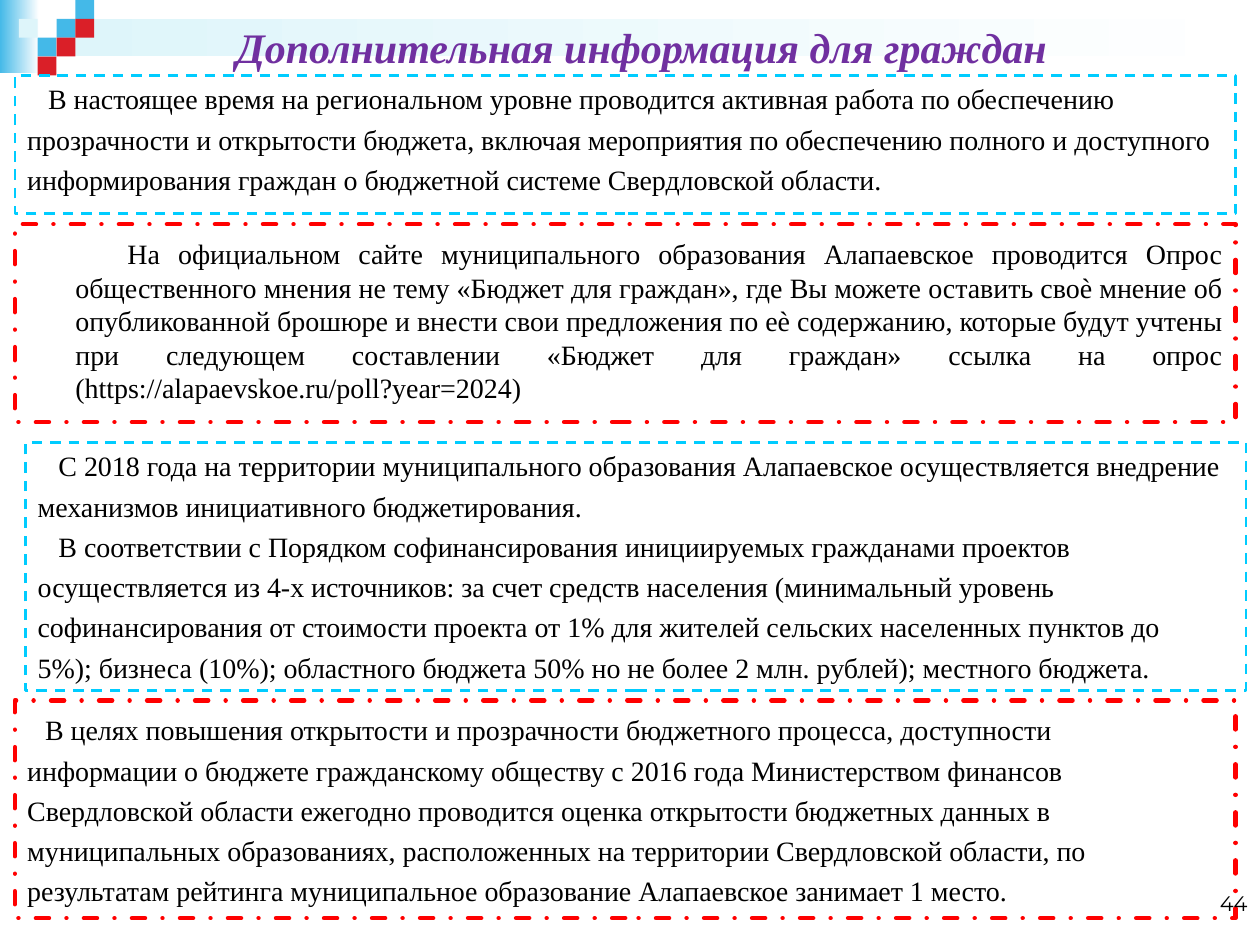
import dataclasses

import pptx
import pptx.dml.color
import pptx.enum.dml
import pptx.enum.shapes
import pptx.enum.text
import pptx.oxml.ns
import pptx.util

Cm = pptx.util.Cm
Pt = pptx.util.Pt
ALIGN = pptx.enum.text.PP_ALIGN
ANCHOR = pptx.enum.text.MSO_ANCHOR
DASH = pptx.enum.dml.MSO_LINE

SERIF = "Times New Roman"
BLUE, RED, PALE, WHITE = "44B9E8", "DA1F28", "DEF5FA", "FFFFFF"
SQUARE = 0.38  # side of one mosaic square, cm
MOSAIC_LEFT = 0.76


@dataclasses.dataclass
class Line:
    text: str
    first_indent: float = 0
    margin: float = 0


@dataclasses.dataclass
class Frame:
    color: str
    weight: float
    dash: int
    cap: str
    top_inset: float


@dataclasses.dataclass
class Panel:
    left: float
    top: float
    height: float
    frame: Frame
    lines: list[Line]


@dataclasses.dataclass
class Square:
    column: int
    row: int
    color: str


CYAN_DASHED = Frame("00CCFF", 1.5, DASH.DASH, "flat", 0.13)
RED_DASH_DOT = Frame("FF0000", 2.5, DASH.DASH_DOT, "rnd", 0.25)

MOSAIC = [
    Square(1, 1, BLUE), Square(2, 0, BLUE), Square(2, 1, RED), Square(0, 2, BLUE),
    Square(-1, 1, PALE), Square(1, 2, RED), Square(0, 3, RED),
]

PANELS = [
    Panel(0.3, 1.52, 2.79, CYAN_DASHED, [
        Line("В настоящее время на региональном уровне проводится активная работа по обеспечению", 0.42),
        Line("прозрачности и открытости бюджета, включая мероприятия по обеспечению полного и доступного"),
        Line("информирования граждан о бюджетной системе Свердловской области."),
    ]),
    Panel(0.3, 4.52, 3.99, RED_DASH_DOT, [
        Line("На официальном сайте муниципального образования Алапаевское проводится Опрос "
             "общественного мнения не тему «Бюджет для граждан», где Вы можете оставить своѐ мнение "
             "об опубликованной брошюре и внести свои предложения по еѐ содержанию, которые будут "
             "учтены при следующем составлении «Бюджет для граждан» ссылка на опрос "
             "(https://alapaevskoe.ru/poll?year=2024)", 1.05, 0.97),
    ]),
    Panel(0.51, 8.92, 5, CYAN_DASHED, [
        Line("С 2018 года на территории муниципального образования Алапаевское осуществляется внедрение", 0.42),
        Line("механизмов инициативного бюджетирования."),
        Line("В соответствии с Порядком софинансирования инициируемых гражданами проектов", 0.42),
        Line("осуществляется из 4-х источников: за счет средств населения (минимальный уровень"),
        Line("софинансирования от стоимости проекта от 1% для жителей сельских населенных пунктов до"),
        Line("5%); бизнеса (10%); областного бюджета 50% но не более 2 млн. рублей); местного бюджета."),
    ]),
    Panel(0.3, 14.12, 4.39, RED_DASH_DOT, [
        Line("В целях повышения открытости и прозрачности бюджетного процесса, доступности", 0.36),
        Line("информации о бюджете гражданскому обществу с 2016 года Министерством финансов"),
        Line("Свердловской области ежегодно проводится оценка открытости бюджетных данных в"),
        Line("муниципальных образованиях, расположенных на территории Свердловской области, по"),
        Line("результатам рейтинга муниципальное образование Алапаевское занимает 1 место."),
    ]),
]


def rgb(value: str) -> pptx.dml.color.RGBColor:
    return pptx.dml.color.RGBColor.from_string(value)


def add_run(paragraph, text: str, size: float, font: str, color: str = "000000"):
    run = paragraph.add_run()
    run.text = text
    run.font.size = Pt(size)
    run.font.name = font
    run.font.color.rgb = rgb(color)
    return run


def add_rectangle(slide, left: float, top: float, width: float, height: float):
    rectangle = slide.shapes.add_shape(
        pptx.enum.shapes.MSO_SHAPE.RECTANGLE, Cm(left), Cm(top), Cm(width), Cm(height))
    rectangle.shadow.inherit = False
    return rectangle


def draw_fade(slide, left: float, top: float, width: float, height: float, color: str) -> None:
    band = add_rectangle(slide, left, top, width, height)
    band.line.fill.background()
    band.fill.gradient()
    band.fill.gradient_angle = 0
    for stop, stop_color, position in zip(band.fill.gradient_stops, (color, WHITE), (0, 1)):
        stop.color.rgb = rgb(stop_color)
        stop.position = position


def draw_square(slide, square: Square) -> None:
    tile = add_rectangle(slide, MOSAIC_LEFT + square.column * SQUARE,
                         square.row * SQUARE, SQUARE, SQUARE)
    tile.line.fill.background()
    tile.fill.solid()
    tile.fill.fore_color.rgb = rgb(square.color)


def draw_panel(slide, panel: Panel) -> None:
    box = add_rectangle(slide, panel.left, panel.top, 24.61, panel.height)
    box.fill.background()
    box.line.color.rgb = rgb(panel.frame.color)
    box.line.width = Pt(panel.frame.weight)
    box.line.dash_style = panel.frame.dash
    box.element.spPr.find(pptx.oxml.ns.qn("a:ln")).set("cap", panel.frame.cap)

    body = box.text_frame
    body.word_wrap = True
    body.vertical_anchor = ANCHOR.TOP
    body.margin_top = Cm(panel.frame.top_inset)
    for index, line in enumerate(panel.lines):
        paragraph = body.add_paragraph() if index else body.paragraphs[0]
        paragraph.alignment = ALIGN.JUSTIFY
        paragraph.space_before = Pt(3.8 if index else 0)
        properties = paragraph._p.get_or_add_pPr()
        properties.set("marL", str(Cm(line.margin)))
        properties.set("indent", str(Cm(line.first_indent)))
        add_run(paragraph, line.text, 16, SERIF)


def draw_title(slide, text: str) -> None:
    heading = slide.shapes.title
    heading.left, heading.top, heading.width, heading.height = Cm(1.5), Cm(0.33), Cm(22.86), Cm(1.24)
    heading.element.getparent().append(heading.element)  # in front of the header band
    heading.text_frame.auto_size = pptx.enum.text.MSO_AUTO_SIZE.NONE
    heading.text_frame.vertical_anchor = ANCHOR.MIDDLE
    paragraph = heading.text_frame.paragraphs[0]
    paragraph.alignment = ALIGN.CENTER
    run = add_run(paragraph, text, 24, SERIF, "7030A0")
    run.font.bold = run.font.italic = True


def draw_page_number(slide, number: str) -> None:
    page = slide.shapes.add_textbox(Cm(19.48), Cm(17.32), Cm(5.92), Cm(1.27)).text_frame
    page.word_wrap = True
    page.vertical_anchor = ANCHOR.BOTTOM
    page.paragraphs[0].alignment = ALIGN.RIGHT
    add_run(page.paragraphs[0], number, 12, "Montserrat")


def main() -> None:
    deck = pptx.Presentation()
    deck.slide_width, deck.slide_height = Cm(25.4), Cm(19.05)
    slide = deck.slides.add_slide(deck.slide_layouts[5])

    # Header decoration
    draw_fade(slide, 0, 0, 0.79, 1.47, BLUE)
    draw_fade(slide, 1.14, 0.38, 24.26, 0.76, PALE)
    for square in MOSAIC:
        draw_square(slide, square)

    # Content
    draw_title(slide, "Дополнительная информация для граждан")
    for panel in PANELS:
        draw_panel(slide, panel)
    draw_page_number(slide, "44")

    deck.save("out.pptx")


if __name__ == "__main__":
    main()
